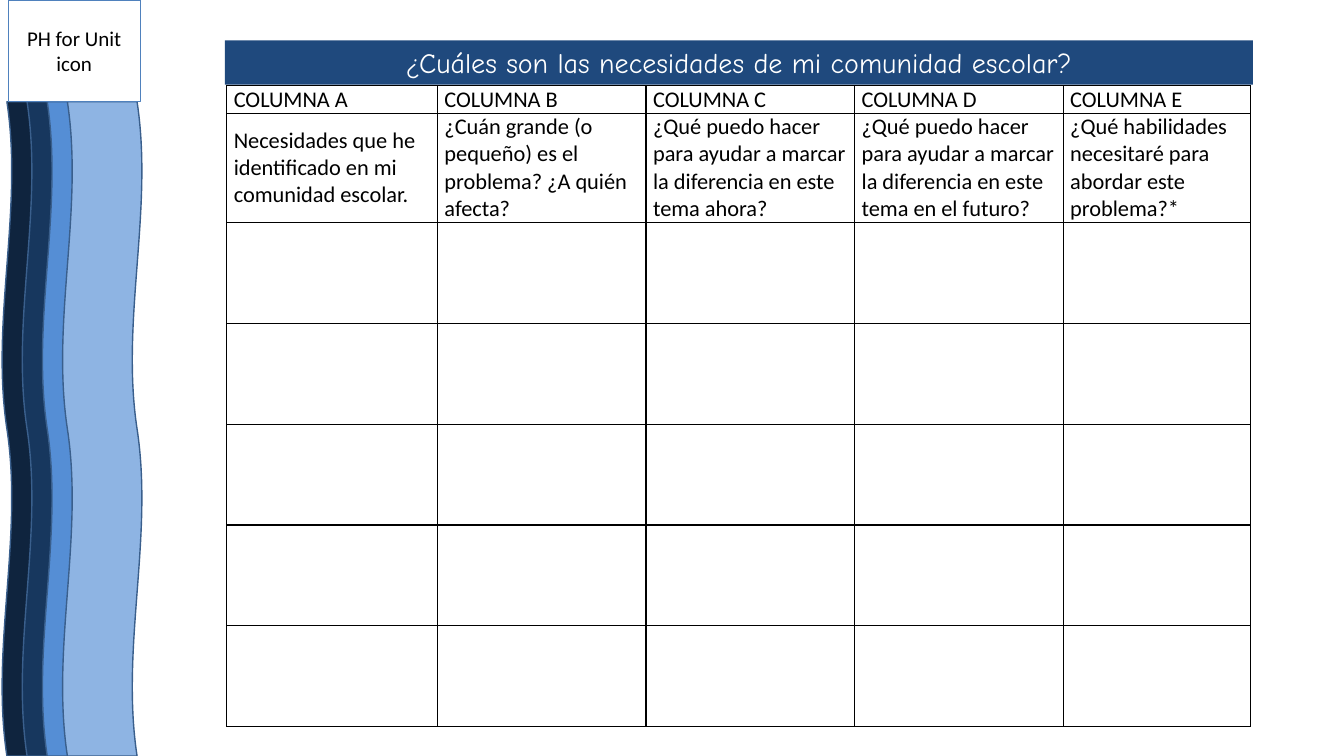
"""Build the school community needs worksheet slide."""
from dataclasses import dataclass

from lxml import etree
from pptx import Presentation
from pptx.dml.color import RGBColor
from pptx.enum.shapes import MSO_SHAPE
from pptx.enum.text import MSO_ANCHOR, MSO_AUTO_SIZE, PP_ALIGN
from pptx.oxml.ns import qn
from pptx.util import Pt

DOUBLE_WAVE, RECTANGLE = MSO_SHAPE.DOUBLE_WAVE, MSO_SHAPE.RECTANGLE
MIDDLE, CENTER, NO_AUTOFIT = MSO_ANCHOR.MIDDLE, PP_ALIGN.CENTER, MSO_AUTO_SIZE.NONE


@dataclass(frozen=True)
class Theme:
    """Colours, fonts and type sizes."""
    black: str = "000000"
    white: str = "FFFFFF"
    banner: str = "1F497D"
    icon_line: str = "4F81BD"
    wave_line: str = "3A5F8C"
    waves: tuple[str, ...] = ("0F243E", "17375E", "558ED5", "8EB4E3")
    body_font: str = "Calibri"
    title_font: str = "Comic Neue"
    title_size: float = 20
    table_size: float = 16
    icon_size: float = 15


@dataclass(frozen=True)
class Box:
    """A frame in points."""
    left: float
    top: float
    width: float
    height: float


@dataclass(frozen=True)
class Column:
    """A worksheet column."""
    heading: str
    prompt: str
    width: float


THEME = Theme()
BANNER = Box(160.6, 28.8, 734.4, 31.7)
ICON = Box(5.8, 0, 94.3, 72.7)
FIRST_WAVE = Box(-203.8, 277.9, 467.3, 56.9)
WAVE_STEP = 14.4
TABLE_LEFT, TABLE_TOP = 162, 61.2
HEADING_HEIGHT, PROMPT_HEIGHT, ANSWER_HEIGHT = 19.5, 78.2, 72
ANSWER_ROWS = 5
COLUMNS = (
    Column("COLUMNA A", "Necesidades que he identificado en mi comunidad escolar.", 150.5),
    Column("COLUMNA B", "¿Cuán grande (o pequeño) es el problema? ¿A quién afecta?", 149),
    Column("COLUMNA C", "¿Qué puedo hacer para ayudar a marcar la diferencia en este tema ahora?", 149),
    Column("COLUMNA D", "¿Qué puedo hacer para ayudar a marcar la diferencia en este tema en el futuro?", 149),
    Column("COLUMNA E", "¿Qué habilidades necesitaré para abordar este problema?*", 134),
)


def rgb(value: str) -> RGBColor:
    """Return a colour from its hex value."""
    return RGBColor.from_string(value)


def style_paragraph(p, font: str, size: float, color: str) -> None:
    """Set the font of a paragraph."""
    p.font.name, p.font.size = font, Pt(size)
    p.font.color.rgb = rgb(color)


def add_box(s, kind, box: Box, fill: str, line: str, weight: float):
    """Add an outlined preset shape."""
    sp = s.shapes.add_shape(kind, Pt(box.left), Pt(box.top), Pt(box.width), Pt(box.height))
    sp.shadow.inherit = False
    sp.fill.solid()
    sp.fill.fore_color.rgb = rgb(fill)
    sp.line.color.rgb = rgb(line)
    sp.line.width = Pt(weight)
    return sp


def add_waves(s) -> None:
    """Add the overlapping vertical waves."""
    for i, color in enumerate(THEME.waves):
        box = Box(FIRST_WAVE.left + i * WAVE_STEP, FIRST_WAVE.top, FIRST_WAVE.width, FIRST_WAVE.height)
        add_box(s, DOUBLE_WAVE, box, color, THEME.wave_line, 1).rotation = 270


def add_icon_box(s) -> None:
    """Add the unit icon box."""
    sp = add_box(s, RECTANGLE, ICON, THEME.white, THEME.icon_line, 0.75)
    tf = sp.text_frame
    tf.word_wrap, tf.vertical_anchor = True, MIDDLE
    p = tf.paragraphs[0]
    p.text, p.alignment = "PH for Unit icon", CENTER
    style_paragraph(p, THEME.body_font, THEME.icon_size, THEME.black)


def set_title(s) -> None:
    """Format the title as the banner."""
    sp = s.shapes.title
    sp.left, sp.top = Pt(BANNER.left), Pt(BANNER.top)
    sp.width, sp.height = Pt(BANNER.width), Pt(BANNER.height)
    sp.fill.solid()
    sp.fill.fore_color.rgb = rgb(THEME.banner)
    tf = sp.text_frame
    tf.auto_size, tf.word_wrap, tf.vertical_anchor = NO_AUTOFIT, True, MIDDLE
    p = tf.paragraphs[0]
    p.text, p.alignment = "¿Cuáles son las necesidades de mi comunidad escolar?", CENTER
    style_paragraph(p, THEME.title_font, THEME.title_size, THEME.white)


def style_cell(cell, text: str) -> None:
    """Write a bordered, unfilled cell."""
    cell.margin_left = cell.margin_right = Pt(5)
    cell.margin_top = cell.margin_bottom = Pt(0)
    cell.vertical_anchor = MIDDLE
    tc_pr = cell._tc.get_or_add_tcPr()
    for side in ("a:lnL", "a:lnR", "a:lnT", "a:lnB"):
        ln = etree.SubElement(tc_pr, qn(side), w=str(Pt(1)))
        fill = etree.SubElement(ln, qn("a:solidFill"))
        etree.SubElement(fill, qn("a:srgbClr"), val=THEME.black)
    cell.fill.background()
    p = cell.text_frame.paragraphs[0]
    p.text = text
    style_paragraph(p, THEME.body_font, THEME.table_size, THEME.black)


def add_worksheet(s) -> None:
    """Add the worksheet table."""
    heights = [HEADING_HEIGHT, PROMPT_HEIGHT] + [ANSWER_HEIGHT] * ANSWER_ROWS
    width = sum(column.width for column in COLUMNS)
    table = s.shapes.add_table(len(heights), len(COLUMNS), Pt(TABLE_LEFT), Pt(TABLE_TOP),
                               Pt(width), Pt(sum(heights))).table
    table.first_row = table.horz_banding = False
    for row, height in zip(table.rows, heights):
        row.height = Pt(height)
    for c, column in enumerate(COLUMNS):
        table.columns[c].width = Pt(column.width)
        texts = [column.heading, column.prompt] + [""] * ANSWER_ROWS
        for r, text in enumerate(texts):
            style_cell(table.cell(r, c), text)


def main() -> None:
    """Build and save the slide."""
    prs = Presentation()
    prs.slide_width, prs.slide_height = Pt(960), Pt(540)
    s = prs.slides.add_slide(prs.slide_layouts.get_by_name("Title Only"))
    set_title(s)
    add_waves(s)
    add_icon_box(s)
    add_worksheet(s)
    prs.save("out.pptx")


if __name__ == "__main__":
    main()
